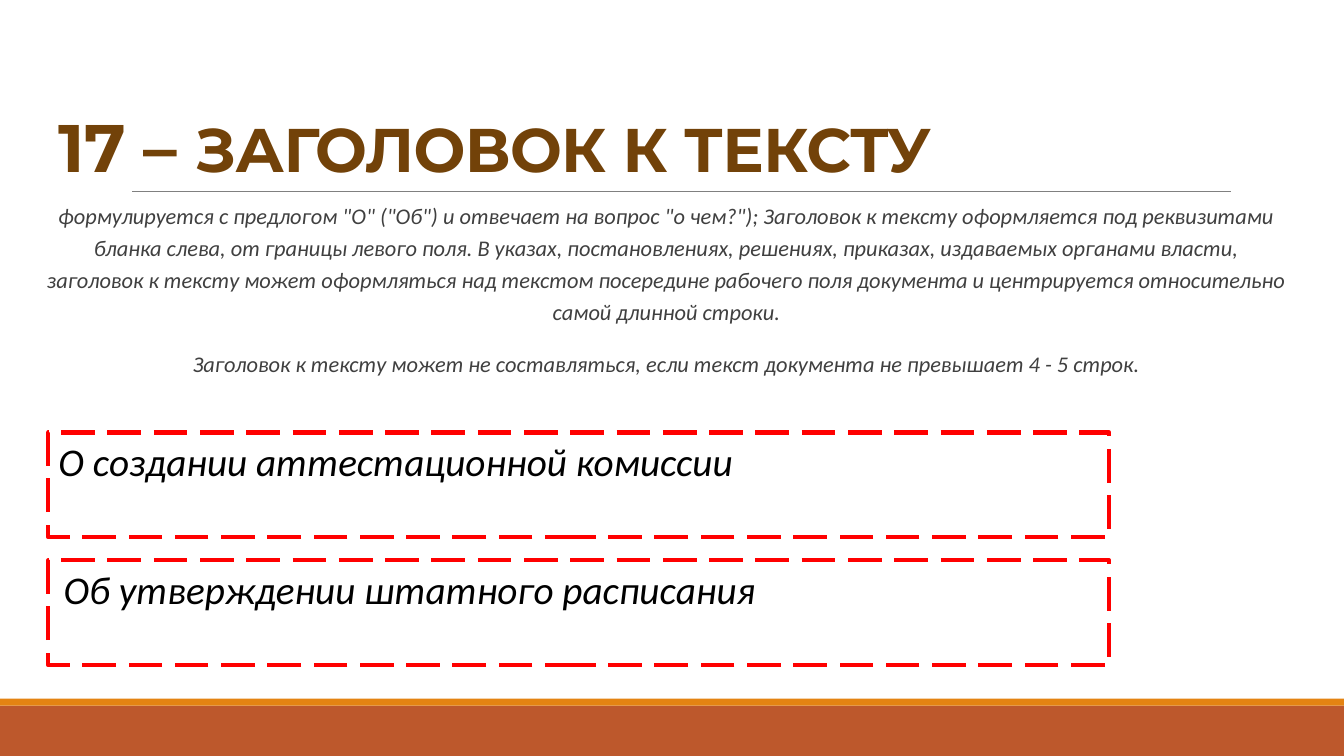
from dataclasses import dataclass

from lxml import etree
from pptx import Presentation
from pptx.dml.color import RGBColor
from pptx.enum.dml import MSO_LINE
from pptx.enum.shapes import MSO_CONNECTOR, MSO_SHAPE
from pptx.enum.text import MSO_ANCHOR, PP_ALIGN
from pptx.oxml.ns import qn
from pptx.util import Inches, Pt

RECTANGLE = MSO_SHAPE.RECTANGLE
STRAIGHT = MSO_CONNECTOR.STRAIGHT
LONG_DASH = MSO_LINE.LONG_DASH
TOP, BOTTOM = MSO_ANCHOR.TOP, MSO_ANCHOR.BOTTOM
LEFT, CENTER = PP_ALIGN.LEFT, PP_ALIGN.CENTER

SLIDE_WIDTH = Inches(13.33)
SLIDE_HEIGHT = Inches(7.5)
TITLE_FONT, BODY_FONT = "Montserrat", "Calibri"
TITLE_COLOR, BODY_COLOR, EXAMPLE_COLOR = "724209", "404040", "000000"
RULE_COLOR, FRAME_COLOR = "808080", "FF0000"

TITLE_PARTS = (("17 – ", 48), ("ЗАГОЛОВОК К ТЕКСТУ", 44))
RULES = (
    'формулируется с предлогом "О" ("Об") и отвечает на вопрос "о чем?"); '
    "Заголовок к тексту оформляется под реквизитами бланка слева, от границы левого поля. "
    "В указах, постановлениях, решениях, приказах, издаваемых органами власти, "
    "заголовок к тексту может оформляться над текстом посередине рабочего поля документа "
    "и центрируется относительно самой длинной строки.",
    "Заголовок к тексту может не составляться, если текст документа не превышает 4 - 5 строк.",
)


@dataclass(frozen=True)
class Area:
    left: float
    top: float
    width: float
    height: float


@dataclass(frozen=True)
class Band:
    area: Area
    color: str


@dataclass(frozen=True)
class Example:
    text: str
    inset: float


BANDS = (
    Band(Area(0, 93.33, 100, 6.67), "BD582C"),
    Band(Area(0, 92.4, 100, 0.93), "E48312"),
)
EXAMPLES = (
    Example("О создании аттестационной комиссии", 0.1),
    Example("Об утверждении штатного расписания", 0.15),
)
TITLE_AREA = Area(3.6, 4.13, 92.27, 21.2)
RULES_AREA = Area(2.48, 25.33, 93.47, 27.73)
FIRST_EXAMPLE = Area(3.6, 57.2, 78.92, 13.87)
EXAMPLE_PITCH = 16.93


def color_of(value: str) -> RGBColor:
    return RGBColor.from_string(value)


def across(share: float) -> int:
    return round(SLIDE_WIDTH * share / 100)


def down(share: float) -> int:
    return round(SLIDE_HEIGHT * share / 100)


def bounds(area: Area) -> tuple[int, int, int, int]:
    return across(area.left), down(area.top), across(area.width), down(area.height)


def format_span(span, font: str, size: float, color: str) -> None:
    span.font.name = font
    span.font.size = Pt(size)
    span.font.color.rgb = color_of(color)


def set_frame(frame, anchor, left: float = 0.1, right: float = 0.1) -> None:
    frame.word_wrap = True
    frame.vertical_anchor = anchor
    frame.margin_left, frame.margin_right = Inches(left), Inches(right)
    frame.margin_top = frame.margin_bottom = Inches(0.05)


def draw_band(page, band: Band) -> None:
    box = page.shapes.add_shape(RECTANGLE, *bounds(band.area))
    box.shadow.inherit = False
    box.fill.solid()
    box.fill.fore_color.rgb = color_of(band.color)
    box.line.fill.background()


def draw_rule(page) -> None:
    height = down(25.33)
    rule = page.shapes.add_connector(STRAIGHT, across(9.83), height, across(91.6), height)
    rule.line.color.rgb = color_of(RULE_COLOR)
    rule.line.width = Pt(0.5)
    etree.SubElement(rule.element.spPr, qn("a:effectLst"))


def draw_title(page) -> None:
    title = page.shapes.title
    title.left, title.top, title.width, title.height = bounds(TITLE_AREA)
    set_frame(title.text_frame, BOTTOM)
    para = title.text_frame.paragraphs[0]
    para.alignment = LEFT
    para.line_spacing = 0.85
    for text, size in TITLE_PARTS:
        span = para.add_run()
        span.text = text
        format_span(span, TITLE_FONT, size, TITLE_COLOR)
        span.font.bold = True
        span.font._element.set("spc", "-50")


def draw_rules(page) -> None:
    frame = page.shapes.add_textbox(*bounds(RULES_AREA)).text_frame
    set_frame(frame, TOP, left=0.1, right=0)
    frame.text = "\n".join(RULES)
    for para in frame.paragraphs:
        para.alignment = CENTER
        para.line_spacing = 1.2
        para.space_before, para.space_after = Pt(12), Pt(2)
        format_span(para.runs[0], BODY_FONT, 16, BODY_COLOR)
        para.runs[0].font.italic = True


def draw_example(page, example: Example, row: int) -> None:
    first = FIRST_EXAMPLE
    area = Area(first.left, first.top + row * EXAMPLE_PITCH, first.width, first.height)
    box = page.shapes.add_shape(RECTANGLE, *bounds(area))
    box.shadow.inherit = False
    box.fill.background()
    box.line.color.rgb = color_of(FRAME_COLOR)
    box.line.width = Pt(3)
    box.line.dash_style = LONG_DASH
    set_frame(box.text_frame, TOP, left=example.inset)
    box.text_frame.text = example.text
    para = box.text_frame.paragraphs[0]
    para.alignment = LEFT
    format_span(para.runs[0], BODY_FONT, 28, EXAMPLE_COLOR)
    para.runs[0].font.italic = True


def main() -> None:
    deck = Presentation()
    deck.slide_width, deck.slide_height = SLIDE_WIDTH, SLIDE_HEIGHT
    page = deck.slides.add_slide(deck.slide_layouts.get_by_name("Title Only"))
    for band in BANDS:
        draw_band(page, band)
    draw_rule(page)
    draw_rules(page)
    draw_title(page)
    for row, example in enumerate(EXAMPLES):
        draw_example(page, example, row)
    deck.save("out.pptx")


if __name__ == "__main__":
    main()
